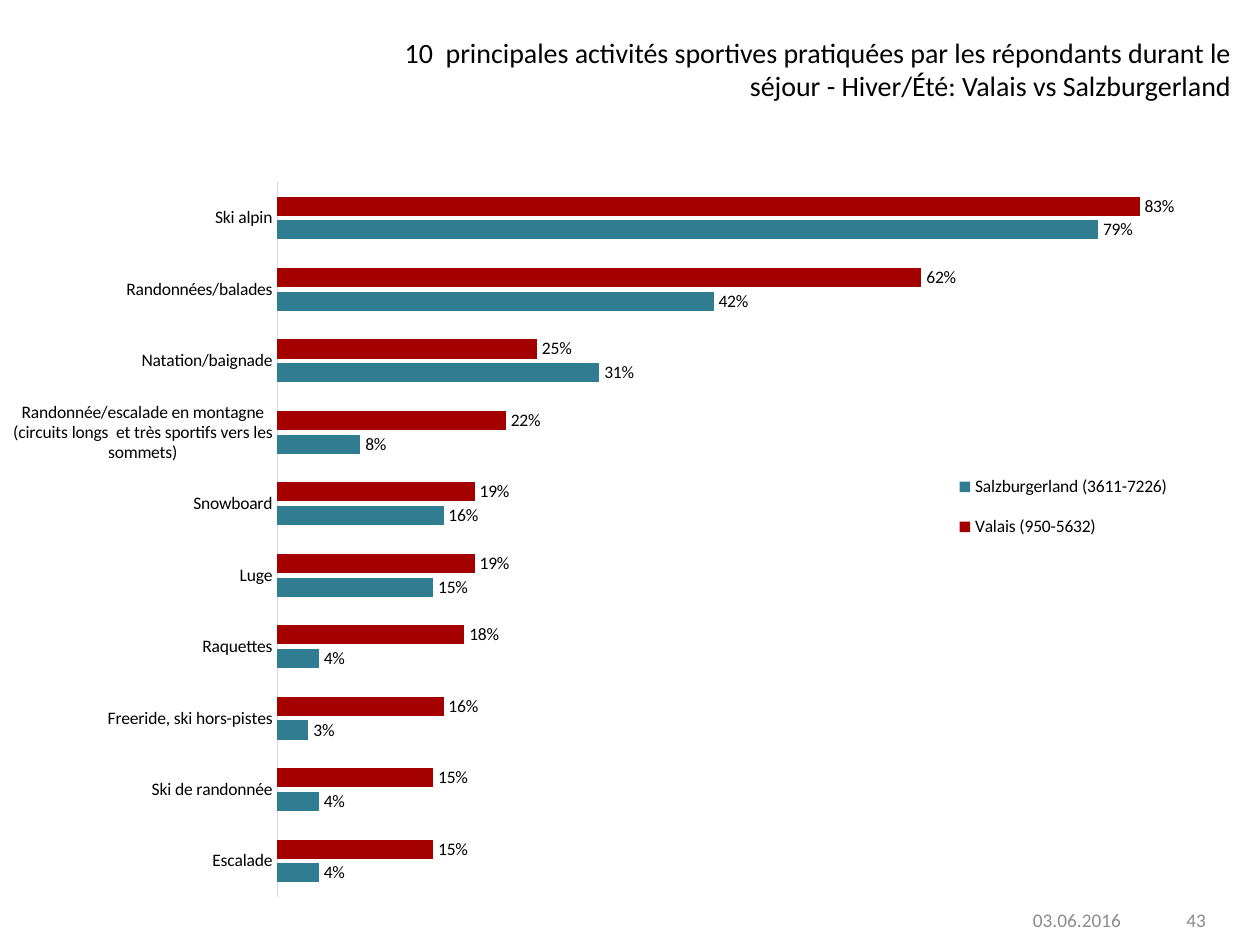
"""Build a slide comparing winter and summer sports in Valais and Salzburgerland."""
from lxml import etree
from pptx import Presentation
from pptx.chart.data import CategoryChartData
from pptx.dml.color import RGBColor as RGB
from pptx.enum.chart import XL_CHART_TYPE as CT, XL_LABEL_POSITION as LP
from pptx.enum.chart import XL_LEGEND_POSITION as LG, XL_TICK_MARK as TM
from pptx.enum.text import MSO_ANCHOR as MA, PP_ALIGN as PA
from pptx.oxml.ns import qn
from pptx.util import Inches, Pt

COLORS = {"text": "000000", "footer": "8C8C8C", "axis": "D9D9D9",
          "valais": "A40000", "salzburg": "307C90"}


def set_font(font, size, color):
    for name, value in {"name": "Calibri", "size": Pt(size), "bold": False}.items():
        setattr(font, name, value)
    font.color.rgb = RGB.from_string(COLORS[color])


def set_layout(parent, index, values):
    for old in parent.findall(qn("c:layout")):
        parent.remove(old)
    layout = etree.Element(qn("c:layout"))
    manual = etree.SubElement(layout, qn("c:manualLayout"))
    for tag, value in values.items():
        etree.SubElement(manual, qn(f"c:{tag}")).set("val", str(value))
    parent.insert(index, layout)


prs = Presentation()
prs.slide_width, prs.slide_height = Inches(10), Inches(7.5)
s = prs.slides.add_slide(prs.slide_layouts[6])

data = CategoryChartData(number_format="0%")
data.categories = [
    "Ski alpin", "Randonnées/balades", "Natation/baignade",
    "Randonnée/escalade en montagne (circuits longs  et très sportifs vers les sommets)",
    "Snowboard", "Luge", "Raquettes", "Freeride, ski hors-pistes",
    "Ski de randonnée", "Escalade"]
data.add_series("Valais (950-5632)",
                [0.83, 0.62, 0.25, 0.22, 0.19, 0.19, 0.18, 0.16, 0.15, 0.15])
data.add_series("Salzburgerland (3611-7226)",
                [0.79, 0.42, 0.31, 0.08, 0.16, 0.15, 0.04, 0.03, 0.04, 0.04])
chart = s.shapes.add_chart(CT.BAR_CLUSTERED, Inches(0), Inches(0.77),
                           Inches(9.87), Inches(6.64), data).chart
chart.has_title = False
set_font(chart.font, 10, "text")

cat_axis, val_axis = chart.category_axis, chart.value_axis
for name, value in {"reverse_order": True, "major_tick_mark": TM.NONE,
                    "minor_tick_mark": TM.NONE}.items():
    setattr(cat_axis, name, value)
set_font(cat_axis.tick_labels.font, 10, "text")
cat_axis.format.line.color.rgb = RGB.from_string(COLORS["axis"])
cat_axis.format.line.width = Pt(0.75)
for name, value in {"minimum_scale": 0, "maximum_scale": 0.9, "visible": False,
                    "has_major_gridlines": False}.items():
    setattr(val_axis, name, value)

plot = chart.plots[0]
for name, value in {"gap_width": 150, "overlap": -25, "vary_by_categories": False}.items():
    setattr(plot, name, value)
for series, color in zip(plot.series, ("valais", "salzburg")):
    series.format.fill.solid()
    series.format.fill.fore_color.rgb = RGB.from_string(COLORS[color])
    labels = series.data_labels
    for name, value in {"show_value": True, "number_format": "0%",
                        "number_format_is_linked": False,
                        "position": LP.OUTSIDE_END}.items():
        setattr(labels, name, value)
    set_font(labels.font, 10, "text")

chart.has_legend = True
legend = chart.legend
legend.position, legend.include_in_layout = LG.BOTTOM, False
set_font(legend.font, 10, "text")
set_layout(legend._element, 1, {"xMode": "edge", "yMode": "edge",
                                "x": 0.76, "y": 0.43, "w": 0.19, "h": 0.12})
set_layout(cat_axis._element.getparent(), 0,
           {"layoutTarget": "inner", "xMode": "edge", "yMode": "edge",
            "x": 0.223, "y": 0.102, "w": 0.752, "h": 0.854})

for text, box, size, color, align, anchor in (
        ("03.06.2016", (8.1, 7.1, 1, 0.4), 11, "footer", PA.LEFT, MA.MIDDLE),
        ("43", (7.34, 7.1, 2.33, 0.4), 11, "footer", PA.RIGHT, MA.MIDDLE),
        ("10  principales activités sportives pratiquées par les répondants durant le "
         "séjour - Hiver/Été: Valais vs Salzburgerland",
         (2.62, 0.23, 7.25, 0.64), 16, "text", PA.RIGHT, MA.TOP)):
    tf = s.shapes.add_textbox(*map(Inches, box)).text_frame
    tf.word_wrap, tf.vertical_anchor = True, anchor
    p = tf.paragraphs[0]
    p.alignment = align
    r = p.add_run()
    r.text = text
    set_font(r.font, size, color)

prs.save("out.pptx")
